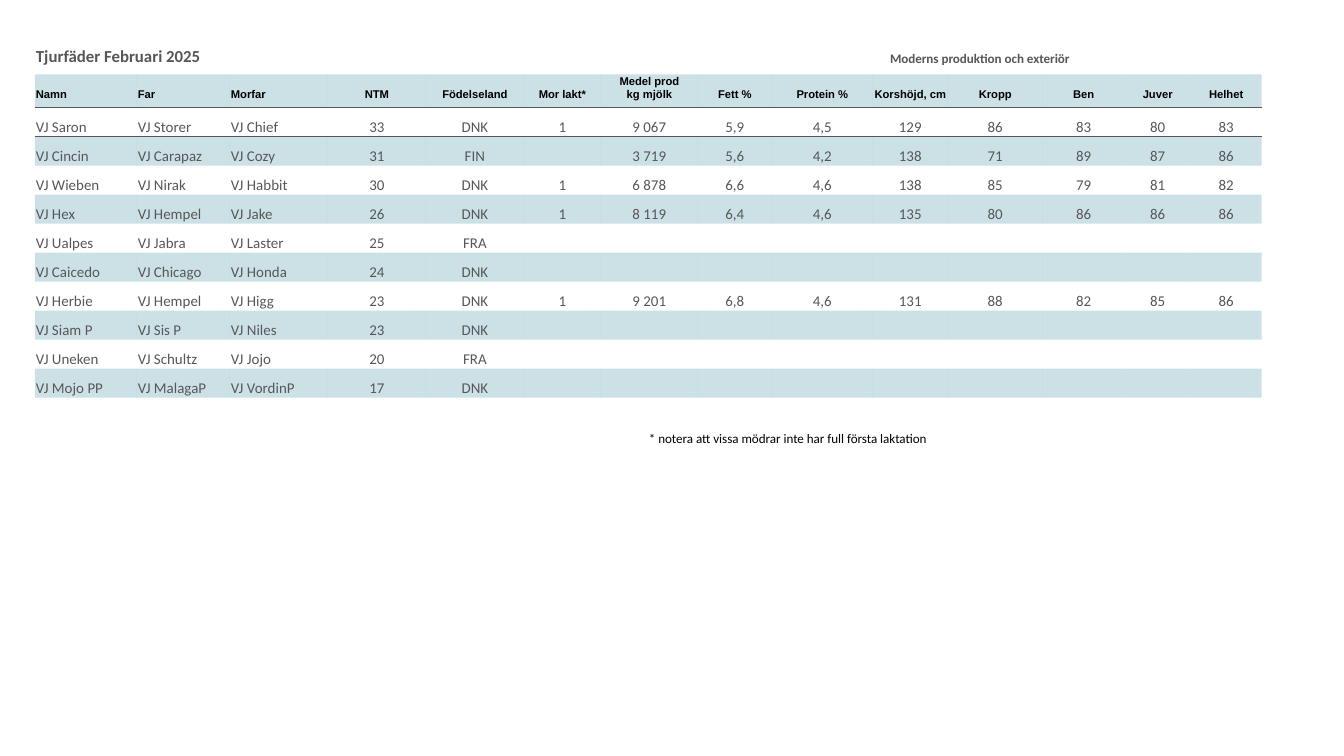
"""Build the slide that lists the bull sires of February 2025."""
from dataclasses import dataclass

from lxml.etree import SubElement
from pptx import Presentation
from pptx.dml.color import RGBColor
from pptx.enum.text import MSO_ANCHOR, PP_ALIGN
from pptx.oxml import parse_xml
from pptx.oxml.ns import nsdecls, qn
from pptx.util import Emu, Pt

SCALE = 914400 / 134.4
PLAIN = "{2D5ABB26-0587-4C30-8999-92F81FD0307C}"
COLORS = {"gray": "575757", "black": "000000", "teal": "006B85"}
WIDTHS = [102, 93, 98, 98, 98, 77, 97, 74, 101, 75, 95, 82, 66, 71]
HEIGHTS = [20] + [29] * 11
LEFT_COLS = 3
TITLES = ["Tjurfäder Februari 2025"] + [""] * 6 + ["Moderns produktion och exteriör"] + [""] * 6
SPANS = [(0, 1), (5, 6), (7, 13)]
HEADS = ["Namn", "Far", "Morfar", "NTM", "Födelseland", "Mor lakt*", "Medel prod\vkg mjölk",
         "Fett %", "Protein %", "Korshöjd, cm", "Kropp", "Ben", "Juver", "Helhet"]
BULLS = [
    "VJ Saron|VJ Storer|VJ Chief|33|DNK|1|9 067|5,9|4,5|129|86|83|80|83",
    "VJ Cincin|VJ Carapaz|VJ Cozy|31|FIN||3 719|5,6|4,2|138|71|89|87|86",
    "VJ Wieben|VJ Nirak|VJ Habbit|30|DNK|1|6 878|6,6|4,6|138|85|79|81|82",
    "VJ Hex|VJ Hempel|VJ Jake|26|DNK|1|8 119|6,4|4,6|135|80|86|86|86",
    "VJ Ualpes|VJ Jabra|VJ Laster|25|FRA",
    "VJ Caicedo|VJ Chicago|VJ Honda|24|DNK",
    "VJ Herbie|VJ Hempel|VJ Higg|23|DNK|1|9 201|6,8|4,6|131|88|82|85|86",
    "VJ Siam P|VJ Sis P|VJ Niles|23|DNK",
    "VJ Uneken|VJ Schultz|VJ Jojo|20|FRA",
    "VJ Mojo PP|VJ MalagaP|VJ VordinP|17|DNK",
]


@dataclass(frozen=True)
class Style:
    """Look of the text in a cell, with its bottom margin in px."""
    font: str
    size: int
    color: str
    bold: bool
    foot: int


TITLE = Style("Calibri", 9, "gray", True, 7)
GROUP = Style("Calibri", 7, "gray", True, 7)
HEAD = Style("Arial", 6, "black", True, 7)
BODY = Style("Calibri", 8, "gray", False, 0)
NOTE = Style("Calibri", 7, "black", False, 7)


def px(count: int) -> Emu:
    """Turn px into EMU."""
    return Emu(round(count * SCALE))


def add_grid(slide, left: int, top: int, widths: list[int], heights: list[int]):
    """Add a table without a banded style."""
    frame = slide.shapes.add_table(len(heights), len(widths), px(left), px(top),
                                   px(sum(widths)), px(sum(heights)))
    grid = frame.table
    grid.first_row = grid.horz_banding = False
    grid._tbl.tblPr.find(qn("a:tableStyleId")).text = PLAIN
    for col, width in zip(grid.columns, widths):
        col.width = px(width)
    for row, height in zip(grid.rows, heights):
        row.height = px(height)
    return grid


def write(cell, text: str, style: Style, align: PP_ALIGN, tint: bool = False) -> None:
    """Fill one cell with text and colour."""
    cell.margin_left = cell.margin_right = cell.margin_top = px(1)
    cell.margin_bottom = px(style.foot)
    cell.vertical_anchor = MSO_ANCHOR.BOTTOM
    line = cell.text_frame.paragraphs[0]
    line.text = text
    line.alignment = align
    for run in line.runs:
        run.font.name = style.font
        run.font.size = Pt(style.size)
        run.font.bold = style.bold
        run.font.color.rgb = RGBColor.from_string(COLORS[style.color])
    if not text:
        line._p.get_or_add_endParaRPr().set("sz", str(style.size * 100))
    if tint:
        cell.fill.solid()
        cell.fill.fore_color.rgb = RGBColor.from_string(COLORS["teal"])
        color = cell._tc.tcPr.find(".//" + qn("a:srgbClr"))
        SubElement(color, qn("a:alpha")).set("val", "20000")
    else:
        cell.fill.background()


def rule(cell, side: str) -> None:
    """Draw a gray line on one side of a cell."""
    cell._tc.get_or_add_tcPr().insert(0, parse_xml(
        f'<a:{side} {nsdecls("a")} w="{Pt(1)}"><a:solidFill>'
        f'<a:srgbClr val="{COLORS["gray"]}"/></a:solidFill></a:{side}>'))


def add_bulls(slide) -> None:
    """Add the table of bulls."""
    grid = add_grid(slide, 35, 46, WIDTHS, HEIGHTS)
    for first, last in SPANS:
        grid.cell(0, first).merge(grid.cell(0, last))
    rows = [TITLES, HEADS] + [bull.split("|") for bull in BULLS]
    for r, row in enumerate(rows):
        row = row + [""] * (len(WIDTHS) - len(row))
        for c, text in enumerate(row):
            top = TITLE if c == 0 else GROUP
            style = (top, HEAD)[r] if r < 2 else BODY
            align = PP_ALIGN.LEFT if c < LEFT_COLS else PP_ALIGN.CENTER
            write(grid.cell(r, c), text, style, align, r % 2 == 1)
    for c in range(len(WIDTHS)):
        rule(grid.cell(1, c), "lnB")
        rule(grid.cell(2, c), "lnT")


def main() -> None:
    """Build and save the slide."""
    deck = Presentation()
    deck.slide_width, deck.slide_height = px(1344), px(756)
    slide = deck.slides.add_slide(deck.slide_layouts[6])
    add_bulls(slide)
    note = add_grid(slide, 648, 425, [481], [29])
    write(note.cell(0, 0), "* notera att vissa mödrar inte har full första laktation",
          NOTE, PP_ALIGN.LEFT)
    deck.save("out.pptx")


if __name__ == "__main__":
    main()
